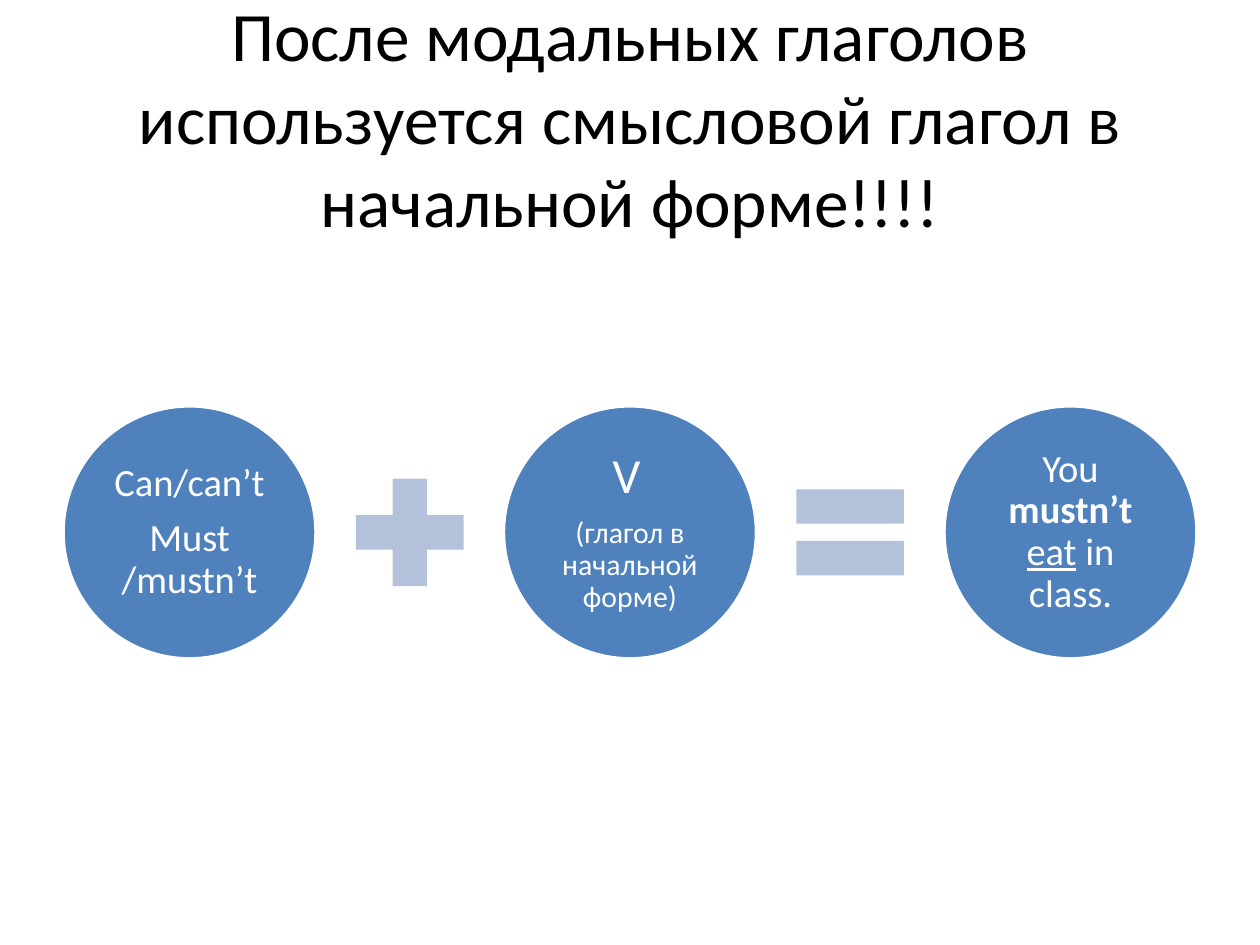
from dataclasses import dataclass

from pptx import Presentation
from pptx.dml.color import RGBColor
from pptx.enum.shapes import MSO_SHAPE as Shape
from pptx.enum.text import MSO_ANCHOR as Anchor, PP_ALIGN as Align
from pptx.util import Pt


@dataclass(frozen=True)
class Theme:
    font: str = "Calibri"
    ink: RGBColor = RGBColor(0x00, 0x00, 0x00)
    paper: RGBColor = RGBColor(0xFF, 0xFF, 0xFF)
    term: RGBColor = RGBColor(0x4F, 0x81, 0xBD)
    operator: RGBColor = RGBColor(0xB3, 0xC1, 0xDB)
    title_size: float = 39.6
    term_size: float = 22
    verb_size: float = 28
    note_size: float = 17


theme = Theme()

TITLE = "После модальных глаголов используется смысловой глагол в начальной форме!!!!"

# Each term is a list of paragraphs; each paragraph is a list of (text, format) spans.
MAIN = {"size": theme.term_size}
NOTE = {"size": theme.note_size}
TERMS = [
    [[("Can/can’t", MAIN)], [("Must /mustn’t", MAIN)]],
    [[("V", {"size": theme.verb_size}), (" ", NOTE)], [("(глагол в начальной форме)", NOTE)]],
    [[("You ", MAIN), ("mustn’t ", {**MAIN, "bold": True}),
      ("eat", {**MAIN, "underline": True}), (" in class.", MAIN)]],
]
OPERATORS = [Shape.MATH_PLUS, Shape.MATH_EQUAL]

SLIDE_WIDTH, SLIDE_HEIGHT = 720, 540
MARGIN = 36
CIRCLE, SIGN = 144.6, 83.6
ROW_MIDDLE = 304.2
TERM_INSET = 2.4
PARA_GAP = 7.7


def add_span(para, text, *, size, color=theme.paper, bold=False, underline=False):
    span = para.add_run()
    span.text = text
    font = span.font
    font.name, font.size, font.bold, font.underline = theme.font, Pt(size), bold, underline
    font.color.rgb = color


def prepare_frame(shape, inset=None):
    frame = shape.text_frame
    frame.word_wrap = True
    frame.vertical_anchor = Anchor.MIDDLE
    if inset is not None:
        frame.margin_left = frame.margin_right = Pt(inset)
        frame.margin_top = frame.margin_bottom = Pt(inset)
    return frame


def add_centred(slide, kind, center, size, fill):
    """Add a square-bounded shape around a point on the equation row."""
    shape = slide.shapes.add_shape(
        kind, Pt(center - size / 2), Pt(ROW_MIDDLE - size / 2), Pt(size), Pt(size))
    shape.shadow.inherit = False
    shape.fill.solid()
    shape.fill.fore_color.rgb = fill
    shape.line.fill.background()
    return shape


def add_title(slide):
    box = slide.shapes.add_textbox(
        Pt(MARGIN), Pt(21.6), Pt(SLIDE_WIDTH - 2 * MARGIN), Pt(90))
    para = prepare_frame(box).paragraphs[0]
    para.alignment = Align.CENTER
    add_span(para, TITLE, size=theme.title_size, color=theme.ink)


def add_term(slide, center, paragraphs):
    circle = add_centred(slide, Shape.OVAL, center, CIRCLE, theme.term)
    circle.line.color.rgb = theme.paper
    circle.line.width = Pt(2)
    frame = prepare_frame(circle, TERM_INSET)
    for index, spans in enumerate(paragraphs):
        para = frame.add_paragraph() if index else frame.paragraphs[0]
        para.alignment = Align.CENTER
        para.line_spacing = 0.9
        para.space_after = Pt(PARA_GAP)
        for text, style in spans:
            add_span(para, text, **style)


def main():
    deck = Presentation()
    deck.slide_width, deck.slide_height = Pt(SLIDE_WIDTH), Pt(SLIDE_HEIGHT)
    slide = deck.slides.add_slide(deck.slide_layouts[6])
    add_title(slide)

    first = MARGIN + CIRCLE / 2
    pitch = (SLIDE_WIDTH - 2 * first) / (len(TERMS) - 1)
    for index, paragraphs in enumerate(TERMS):
        center = first + index * pitch
        add_term(slide, center, paragraphs)
        if index < len(OPERATORS):
            add_centred(slide, OPERATORS[index], center + pitch / 2, SIGN, theme.operator)

    deck.save("out.pptx")


if __name__ == "__main__":
    main()
